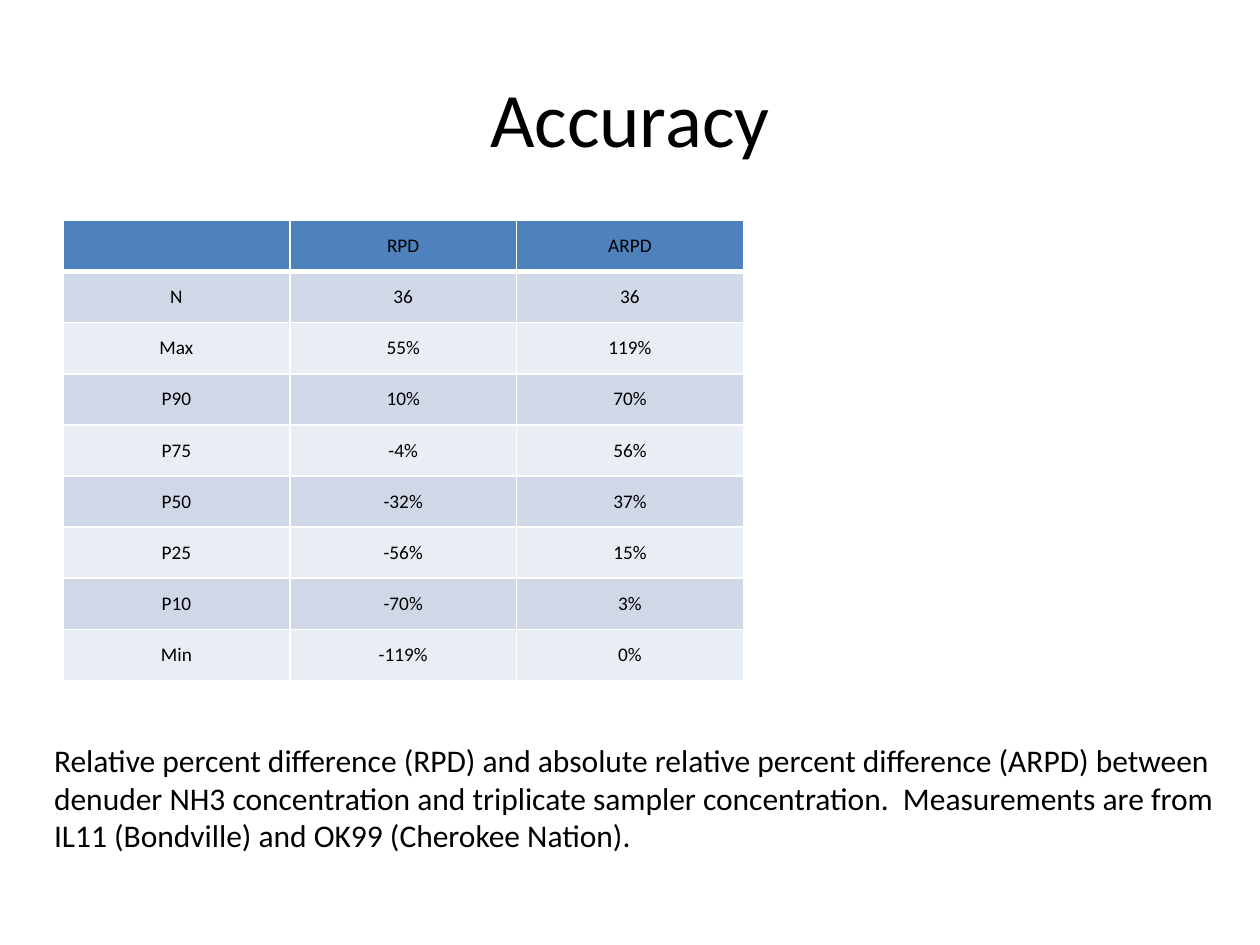
from lxml.etree import SubElement
from pptx import Presentation
from pptx.dml.color import RGBColor
from pptx.enum.text import MSO_ANCHOR, PP_ALIGN
from pptx.oxml.ns import qn
from pptx.util import Pt


def paint(fill, color):
    fill.solid()
    fill.fore_color.rgb = RGBColor.from_string(color)


def write(frame, lines, size=18, color="000000", align=PP_ALIGN.LEFT):
    for i, line in enumerate(lines):
        para = frame.paragraphs[0] if i == 0 else frame.add_paragraph()
        para.alignment = align
        run = para.add_run()
        run.text = line
        run.font.name = "Calibri"
        run.font.size = Pt(size)
        paint(run.font.fill, color)


deck = Presentation()
deck.slide_width, deck.slide_height = Pt(720), Pt(540)
slide = deck.slides.add_slide(deck.slide_layouts[6])
shapes = slide.shapes

# Title
title = shapes.add_textbox(Pt(36), Pt(21.6), Pt(648), Pt(90)).text_frame
title.word_wrap = True
title.vertical_anchor = MSO_ANCHOR.MIDDLE
write(title, ["Accuracy"], size=44, align=PP_ALIGN.CENTER)

# Table of percentiles
rows = [
    ("", "RPD", "ARPD"),
    ("N", "36", "36"),
    ("Max", "55%", "119%"),
    ("P90", "10%", "70%"),
    ("P75", "-4%", "56%"),
    ("P50", "-32%", "37%"),
    ("P25", "-56%", "15%"),
    ("P10", "-70%", "3%"),
    ("Min", "-119%", "0%"),
]
table = shapes.add_table(len(rows), 3, Pt(36), Pt(126), Pt(388.8), Pt(262.8)).table
for r, row in enumerate(rows):
    table.rows[r].height = Pt(29.2)
    shade = "4F81BD" if r == 0 else ("E9EDF4", "D0D8E8")[r % 2]
    for c, word in enumerate(row):
        cell = table.cell(r, c)
        cell.margin_left = cell.margin_right = 0
        cell.margin_top = cell.margin_bottom = 0
        cell.vertical_anchor = MSO_ANCHOR.MIDDLE

        # White borders, thicker below the header
        props = cell._tc.get_or_add_tcPr()
        for side in ("L", "R", "T", "B"):
            thick = (r, side) in ((0, "B"), (1, "T"))
            line = SubElement(props, qn(f"a:ln{side}"), w=str(Pt(3 if thick else 1)))
            SubElement(SubElement(line, qn("a:solidFill")), qn("a:srgbClr"), val="FFFFFF")

        paint(cell.fill, shade)
        if word:
            write(cell.text_frame, [word], size=11, align=PP_ALIGN.CENTER)

# Caption
note = shapes.add_textbox(Pt(23.8), Pt(419.8), Pt(689.8), Pt(72.7)).text_frame
note.word_wrap = False
write(note, [
    "Relative percent difference (RPD) and absolute relative percent difference (ARPD) between",
    "denuder NH3 concentration and triplicate sampler concentration.  Measurements are from",
    "IL11 (Bondville) and OK99 (Cherokee Nation).",
])

deck.save("out.pptx")
